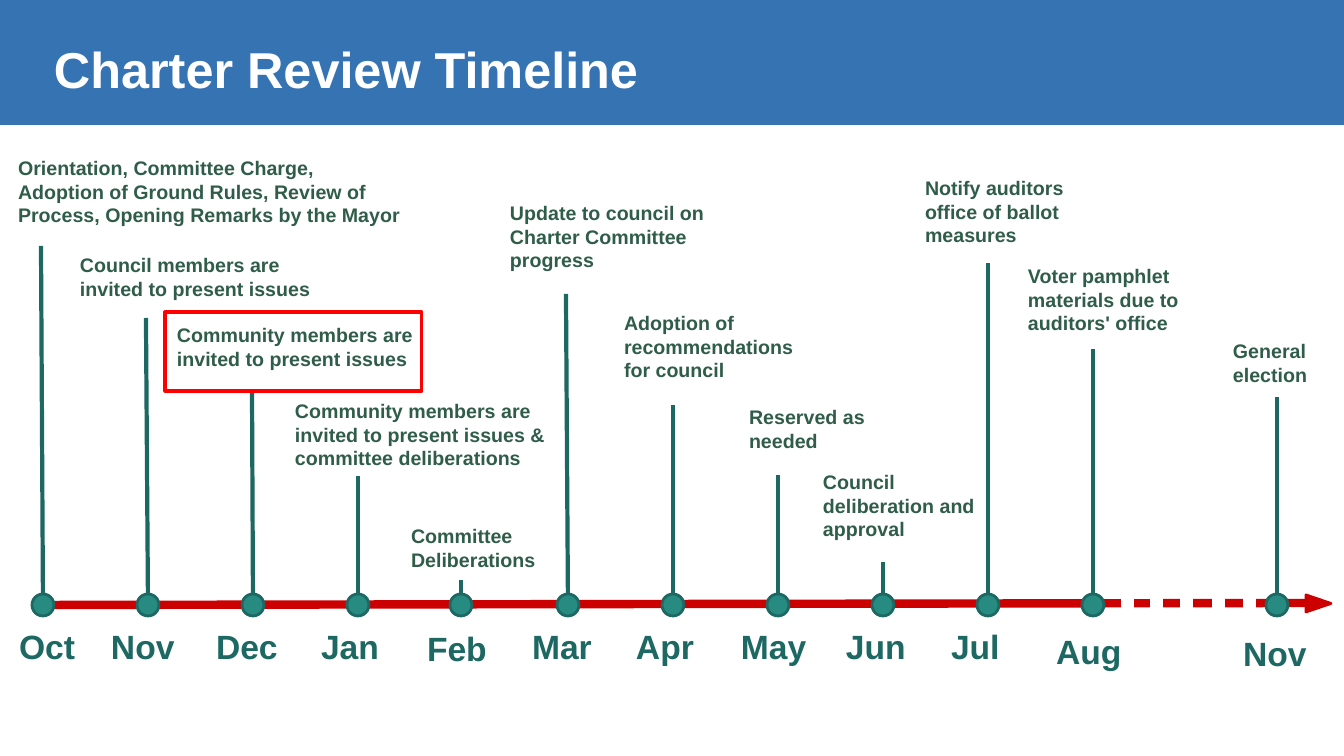
from lxml import etree
from pptx import Presentation
from pptx import util as u
from pptx.dml.color import RGBColor
from pptx.enum import shapes
from pptx.oxml.ns import qn

TITLE = "Charter Review Timeline"
FONT = "Arial"
BLUE, TEAL, GREEN, DOT = "3573B3", "1D6862", "305D49", "278B82"
RED, BRIGHT_RED, WHITE = "CC0000", "FF0000", "FFFFFF"
FIRST_X, STEP, AXIS_Y, RADIUS = 43, 105, 605, 11

# month, shift from the grid, month left, month top, stem top, stem lean
MONTHS = [
    ("Oct", 0, 19, 626, 246, 2),
    ("Nov", 0, 111, 626, 318, 2),
    ("Dec", 0, 216, 626, 390, 1),
    ("Jan", 0, 321, 626, 476, 0),
    ("Feb", -2, 427, 628, 580, 0),
    ("Mar", 0, 532, 626, 294, 2),
    ("Apr", 0, 636, 626, 405, 0),
    ("May", 0, 741, 626, 475, 0),
    ("Jun", 0, 846, 626, 562, 0),
    ("Jul", 0, 951, 626, 263, 0),
    ("Aug", 0, 1056, 631, 349, 0),
    ("Nov", 79, 1243, 633, 397, 0),
]

# text, left, top, width, height
EVENTS = [
    ("Orientation, Committee Charge, Adoption of Ground Rules, Review of Process, "
     "Opening Remarks by the Mayor", 18, 156, 383, 104),
    ("Council members are invited to present issues", 80, 253, 244, 60),
    ("Community members are invited to present issues", 177, 323, 242, 68),
    ("Community members are invited to present issues & committee deliberations",
     295, 399, 257, 80),
    ("Committee Deliberations", 411, 524, 203, 50),
    ("Update to council on Charter Committee progress", 510, 201, 203, 80),
    ("Adoption of recommendations for council", 624, 311, 174, 90),
    ("Reserved as needed", 749, 405, 154, 50),
    ("Council deliberation and approval", 823, 470, 154, 80),
    ("Notify auditors office of ballot measures", 925, 176, 154, 80),
    ("Voter pamphlet materials due to auditors' office", 1028, 264, 154, 82),
    ("General election", 1233, 339, 125, 50),
]

# left, top
GAPS = [(1122, 590), (1151, 597), (1181, 597), (1213, 599), (1244, 594)]


def px(n):
    return u.Emu(round(n * 914400 / 100.8))


def rgb(value):
    return RGBColor.from_string(value)


def add_line(s, x1, y1, x2, y2, color, width):
    c = s.shapes.add_connector(shapes.MSO_CONNECTOR.STRAIGHT, px(x1), px(y1), px(x2), px(y2))
    c.line.color.rgb = rgb(color)
    c.line.width = u.Pt(width)
    etree.SubElement(c._element.spPr, qn("a:effectLst"))


def add_shape(s, kind, x, y, w, h, fill=None, line=None, width=2):
    sp = s.shapes.add_shape(kind, px(x), px(y), px(w), px(h))
    sp.shadow.inherit = False
    if fill:
        sp.fill.solid()
        sp.fill.fore_color.rgb = rgb(fill)
    else:
        sp.fill.background()
    if line:
        sp.line.color.rgb = rgb(line)
        sp.line.width = u.Pt(width)
    else:
        sp.line.fill.background()
    return sp


def add_text(s, words, x, y, w, h, size, color):
    tf = s.shapes.add_textbox(px(x), px(y), px(w), px(h)).text_frame
    tf.word_wrap = True
    tf.margin_left = tf.margin_right = tf.margin_top = tf.margin_bottom = 0
    p = tf.paragraphs[0]
    p.space_after = u.Pt(12)
    r = p.add_run()
    r.text = words
    r.font.name = FONT
    r.font.size = u.Pt(size)
    r.font.bold = True
    r.font.color.rgb = rgb(color)


def main():
    prs = Presentation()
    prs.slide_width, prs.slide_height = px(1344), px(756)
    s = prs.slides.add_slide(prs.slide_layouts[6])
    kinds = shapes.MSO_SHAPE
    centres = [FIRST_X + STEP * i + m[1] for i, m in enumerate(MONTHS)]

    for x, (_, _, _, _, top, lean) in zip(centres, MONTHS):
        add_line(s, x, AXIS_Y, x - lean, top, TEAL, 3)
    add_line(s, 33, AXIS_Y, 1306, AXIS_Y - 2, RED, 6)

    add_shape(s, kinds.RECTANGLE, 0, 0, 1344, 125, BLUE)
    add_text(s, TITLE, 54, 38, 1218, 66, 36, WHITE)

    for x, (month, _, left, top, _, _) in zip(centres, MONTHS):
        add_shape(s, kinds.OVAL, x - RADIUS, AXIS_Y - RADIUS, 2 * RADIUS, 2 * RADIUS, DOT, TEAL)
        add_text(s, month, left, top, 76, 49, 24, TEAL)
    for words, *box in EVENTS:
        add_text(s, words, *box, 14, GREEN)

    arrow = add_shape(s, kinds.ISOSCELES_TRIANGLE, 1310, 591, 17, 25, RED, RED)
    arrow.rotation = 90
    for x, y in GAPS:
        add_shape(s, kinds.RECTANGLE, x, y, 11, 20, WHITE, WHITE)
    add_shape(s, kinds.RECTANGLE, 165, 312, 257, 79, line=BRIGHT_RED, width=2.25)

    prs.save("out.pptx")


if __name__ == "__main__":
    main()
